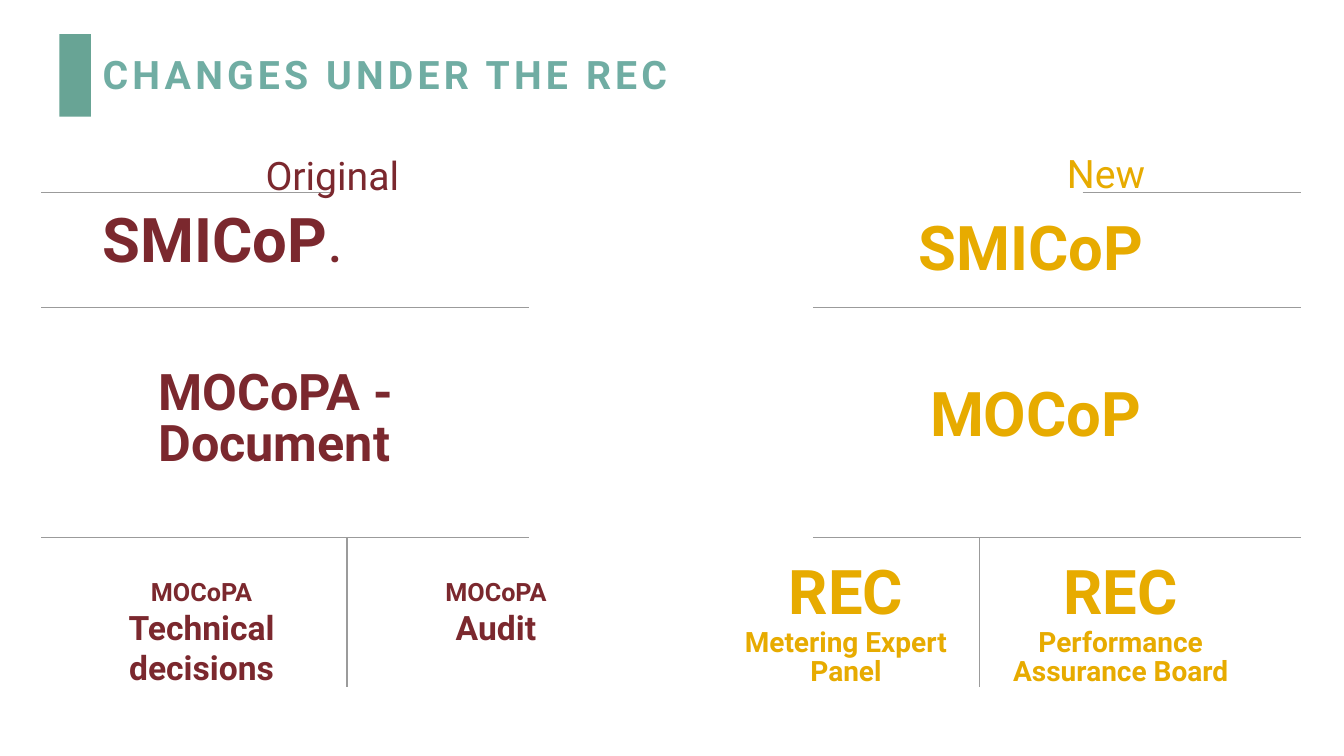
import dataclasses
import typing

import pptx
import pptx.dml.color
import pptx.enum.shapes
import pptx.enum.text
import pptx.oxml.ns
import pptx.slide
import pptx.util
from lxml import etree

Cm = pptx.util.Cm
Align = pptx.enum.text.PP_ALIGN
LEFT, MID, RIGHT = Align.LEFT, Align.CENTER, Align.RIGHT


@dataclasses.dataclass(frozen=True)
class Theme:
    font: str = "Roboto"
    bar: str = "68A495"
    title: str = "70ADA3"
    rule: str = "9B9B9B"
    old: str = "7B282E"
    new: str = "E7AB00"
    huge: int = 44
    large: int = 36
    head: int = 28
    sub: int = 24
    role: int = 20
    small: int = 18


THEME = Theme()


@dataclasses.dataclass(frozen=True)
class Line:
    text: str
    size: int
    bold: bool = True


@dataclasses.dataclass(frozen=True)
class Label:
    left: float
    top: float
    width: float
    height: float
    color: str
    lines: typing.Tuple[Line, ...]
    align: Align = LEFT
    tight: bool = True


class Rule(typing.NamedTuple):
    x1: float
    y1: float
    x2: float
    y2: float


# Edges shared by the rules of the two columns
OLD_L, OLD_R, NEW_L, NEW_R = 1.04, 13.34, 20.5, 32.79
TOP, MIDDLE, LOW, FOOT = 4.85, 7.75, 13.54, 17.32

RULES = [Rule(OLD_L, TOP, 8.38, TOP), Rule(27.28, TOP, NEW_R, TOP)]
RULES += [Rule(a, y, b, y) for y in (MIDDLE, LOW)
          for a, b in ((OLD_L, OLD_R), (NEW_L, NEW_R))]
RULES += [Rule(x, LOW, x, FOOT) for x in (8.74, 24.69)]

LABELS = [
    # Original column
    Label(5.59, 3.68, 4.72, 1.45, THEME.old,
          (Line("Original", THEME.head, False),), RIGHT, False),
    Label(2.46, 5.31, 6.5, 1.8, THEME.old, (Line("SMICoP.", THEME.huge),)),
    Label(3.86, 9.25, 6.5, 1.8, THEME.old,
          (Line("MOCoPA - Document", THEME.large),)),
    Label(1.83, 14.4, 6.5, 3.07, THEME.old,
          (Line("MOCoPA", THEME.small),
           Line("Technical decisions", THEME.sub)), MID, False),
    Label(9.25, 14.4, 6.5, 2.06, THEME.old,
          (Line("MOCoPA", THEME.small), Line("Audit", THEME.sub)), MID, False),
    # New column
    Label(26.64, 3.63, 5.08, 1.45, THEME.new,
          (Line("New", THEME.head, False),), LEFT, False),
    Label(22.12, 5.49, 6.78, 1.8, THEME.new,
          (Line("SMICoP", THEME.huge),), RIGHT),
    Label(22.07, 9.68, 6.78, 1.8, THEME.new,
          (Line("MOCoP", THEME.huge),), RIGHT),
    Label(17.88, 14.17, 6.83, 3.15, THEME.new,
          (Line("REC", THEME.huge),
           Line("Metering Expert Panel", THEME.role)), MID),
    Label(24.69, 14.17, 7.06, 3.15, THEME.new,
          (Line("REC", THEME.huge),
           Line("Performance Assurance Board", THEME.role)), MID),
]


def rgb(code: str) -> pptx.dml.color.RGBColor:
    return pptx.dml.color.RGBColor.from_string(code)


def draw_rule(slide: pptx.slide.Slide, rule: Rule) -> None:
    line = slide.shapes.add_connector(
        pptx.enum.shapes.MSO_CONNECTOR.STRAIGHT, *map(Cm, rule))
    line.line.color.rgb = rgb(THEME.rule)
    line.line.width = pptx.util.Pt(1)
    etree.SubElement(line._element.spPr, pptx.oxml.ns.qn("a:effectLst"))


def draw_label(slide: pptx.slide.Slide, label: Label) -> pptx.text.text.TextFrame:
    box = slide.shapes.add_textbox(Cm(label.left), Cm(label.top),
                                   Cm(label.width), Cm(label.height))
    frame = box.text_frame
    frame.word_wrap = True
    if label.tight:
        frame.margin_left, frame.margin_right = Cm(0.13), Cm(0.08)
        frame.margin_top = frame.margin_bottom = Cm(0.05)
    frame.text = "\n".join(line.text for line in label.lines)
    for i, (para, line) in enumerate(zip(frame.paragraphs, label.lines)):
        para.alignment = label.align
        if label.tight:
            para.line_spacing = 0.85
            if i:
                para.space_before = pptx.util.Pt(2)
        for run in para.runs:
            run.font.name = THEME.font
            run.font.size = pptx.util.Pt(line.size)
            run.font.bold = line.bold
            run.font.color.rgb = rgb(label.color)
    return frame


def draw_title(slide: pptx.slide.Slide) -> None:
    bar = slide.shapes.add_shape(pptx.enum.shapes.MSO_SHAPE.RECTANGLE,
                                 Cm(1.5), Cm(0.86), Cm(0.79), Cm(2.08))
    bar.shadow.inherit = False
    bar.fill.solid()
    bar.fill.fore_color.rgb = rgb(THEME.bar)
    bar.line.fill.background()

    text = Line("CHANGES UNDER THE REC", THEME.head)
    frame = draw_label(slide, Label(2.34, 1.02, 25.78, 1.83, THEME.title,
                                    (text,), tight=False))
    frame.vertical_anchor = pptx.enum.text.MSO_ANCHOR.MIDDLE
    para = frame.paragraphs[0]
    para.line_spacing = 0.9
    para.runs[0].font._element.set("spc", "300")


def main() -> None:
    deck = pptx.Presentation()
    deck.slide_width, deck.slide_height = Cm(33.87), Cm(19.05)
    slide = deck.slides.add_slide(deck.slide_layouts[6])

    # Title, rules, then the texts of both columns
    draw_title(slide)
    for rule in RULES:
        draw_rule(slide, rule)
    frames = [draw_label(slide, label) for label in LABELS]

    # The full stop after the first code is lighter
    code = frames[1].paragraphs[0]
    code.runs[0].text = "SMICoP"
    dot = code.add_run()
    dot.text = "."
    dot.font.name = THEME.font
    dot.font.size = pptx.util.Pt(THEME.huge)
    dot.font.bold = False
    dot.font.color.rgb = rgb(THEME.old)

    deck.save("out.pptx")


if __name__ == "__main__":
    main()
